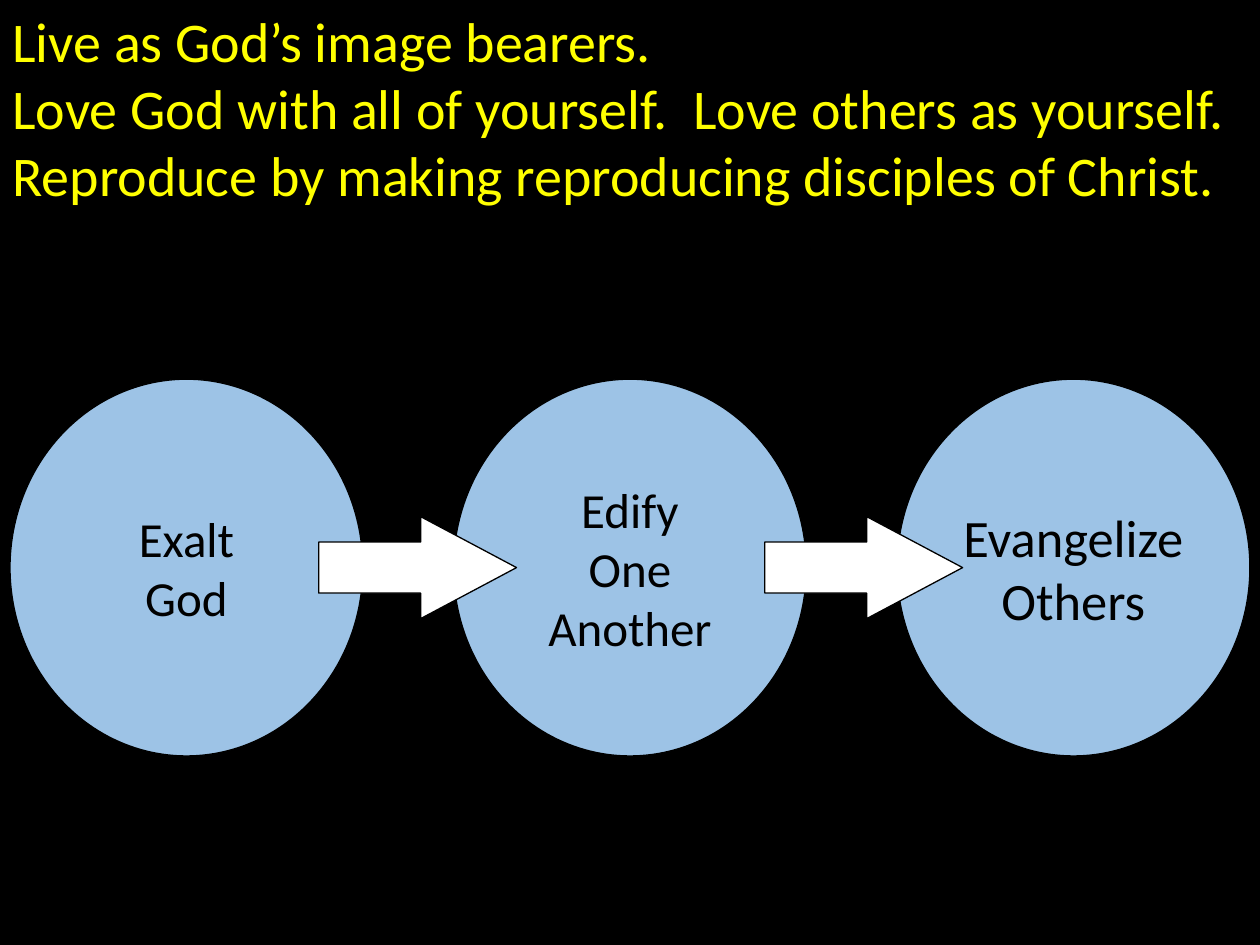
from pptx import Presentation
from pptx.dml.color import RGBColor
from pptx.enum import shapes, text
from pptx.util import Pt

COLORS = {"background": "000000", "heading": "FFFF00", "circle": "9DC3E6",
          "arrow": "FFFFFF", "ink": "000000"}


def write(frame, paragraphs, size, color, align=text.PP_ALIGN.LEFT, anchor=text.MSO_ANCHOR.TOP):
    frame.word_wrap = True
    frame.vertical_anchor = anchor
    for index, words in enumerate(paragraphs):
        paragraph = frame.add_paragraph() if index else frame.paragraphs[0]
        paragraph.alignment = align
        run = paragraph.add_run()
        run.text = words
        run.font.name = "Calibri"
        run.font.size = Pt(size)
        run.font.color.rgb = RGBColor.from_string(COLORS[color])


def add_figure(preset, left, top, width, height, color):
    figure = slide.shapes.add_shape(preset, Pt(left), Pt(top), Pt(width), Pt(height))
    figure.shadow.inherit = False
    figure.fill.solid()
    figure.fill.fore_color.rgb = RGBColor.from_string(COLORS[color])
    figure.line.color.rgb = RGBColor.from_string(COLORS["ink"])
    figure.line.width = Pt(0.75)
    return figure


prs = Presentation()
prs.slide_width, prs.slide_height = Pt(720), Pt(540)
slide = prs.slides.add_slide(prs.slide_layouts[6])
slide.background.fill.solid()
slide.background.fill.fore_color.rgb = RGBColor.from_string(COLORS["background"])

calling = slide.shapes.add_textbox(Pt(0), Pt(0), Pt(720), Pt(123.84))
write(calling.text_frame, [
    "Live as God’s image bearers.",
    "Love God with all of yourself.  Love others as yourself.  "
    "Reproduce by making reproducing disciples of Christ.",
], size=32, color="heading")
calling.text_frame.auto_size = text.MSO_AUTO_SIZE.SHAPE_TO_FIT_TEXT

purposes = [(["Evangelize", "Others"], 30), (["Edify", "One Another"], 28), (["Exalt", "God"], 28)]
for step, (words, size) in enumerate(purposes):
    circle = add_figure(shapes.MSO_SHAPE.OVAL, 512.64 - step * 253.44, 216.72, 201.6, 215.28, "circle")
    write(circle.text_frame, words, size=size, color="ink",
          align=text.PP_ALIGN.CENTER, anchor=text.MSO_ANCHOR.MIDDLE)

for left in (182.16, 437.04):
    arrow = add_figure(shapes.MSO_SHAPE.RIGHT_ARROW, left, 295.2, 113.04, 58.32, "arrow")
    arrow.adjustments[0] = 0.5
    arrow.adjustments[1] = 0.94

prs.save("out.pptx")
